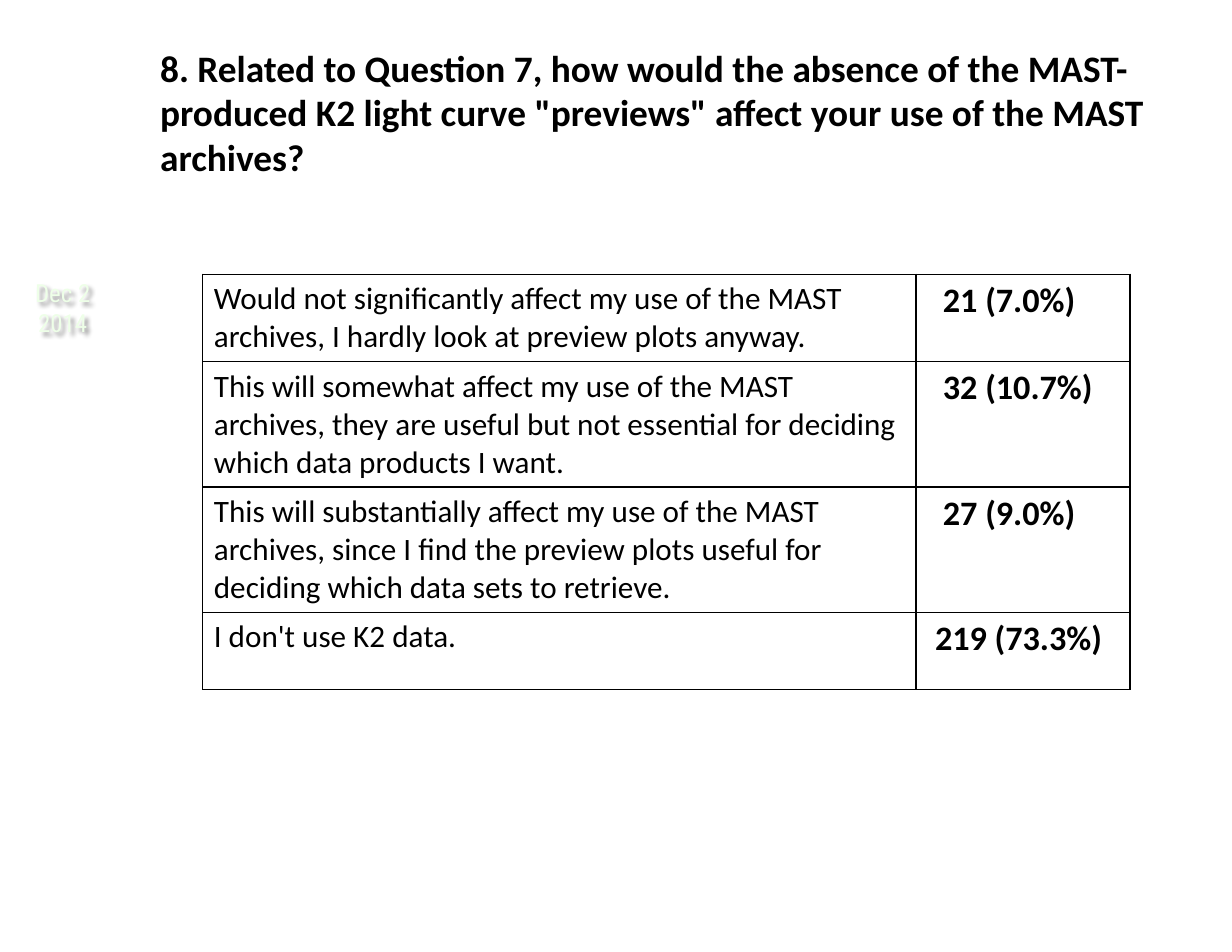
from lxml.etree import SubElement
from pptx import Presentation
from pptx.dml.color import RGBColor
from pptx.enum.text import PP_ALIGN
from pptx.oxml.ns import qn
from pptx.util import Inches, Pt

TITLE = ('8. Related to Question 7, how would the absence of the MAST-produced '
         'K2 light curve "previews" affect your use of the MAST archives?')
DATE = "Dec 2 2014"
ANSWERS = [
    ("Would not significantly affect my use of the MAST archives, "
     "I hardly look at preview plots anyway.", "21 (7.0%)", 0.78, 0.24),
    ("This will somewhat affect my use of the MAST archives, they are useful "
     "but not essential for deciding which data products I want.", "32 (10.7%)", 1.12, 0.24),
    ("This will substantially affect my use of the MAST archives, since I find the "
     "preview plots useful for deciding which data sets to retrieve.", "27 (9.0%)", 1.12, 0.24),
    ("I don't use K2 data.", "219 (73.3%)", 0.69, 0.17),
]
COLS = (6.37, 1.91)
THEME = {
    "font": "Calibri", "date_font": "Roboto Condensed",
    "ink": "000000", "date_ink": "EEFFE8",
    "title": 24, "date": 16, "answer": 20, "count": 22, "border": 1,
}


def write(tf, text, size, bold=False, font=THEME["font"], color=THEME["ink"]):
    """Put one formatted paragraph in a text frame."""
    tf.text = text
    r = tf.paragraphs[0].runs[0]
    r.font.name, r.font.size, r.font.bold = font, Pt(size), bold
    r.font.color.rgb = RGBColor.from_string(color)


def add_text(s, box, text, size, **style):
    """Add a wrapped text box."""
    sp = s.shapes.add_textbox(*map(Inches, box))
    tf = sp.text_frame
    tf.word_wrap = True
    tf.margin_left = tf.margin_right = Inches(0.11)
    tf.margin_top = tf.margin_bottom = Inches(0.06)
    write(tf, text, size, **style)
    return sp


def add_shadow(sp):
    """Give the text of an unfilled box a soft shadow."""
    effects = SubElement(sp._element.spPr, qn("a:effectLst"))
    shadow = SubElement(effects, qn("a:outerShdw"), blurRad="38100", dist="38100",
                        dir="2700000", algn="tl", rotWithShape="0")
    color = SubElement(shadow, qn("a:srgbClr"), val=THEME["ink"])
    SubElement(color, qn("a:alpha"), val="43000")


def style_cell(cell):
    """Give a cell thin borders and no fill."""
    tcPr = cell._tc.get_or_add_tcPr()
    for side in ("lnL", "lnR", "lnT", "lnB"):
        ln = SubElement(tcPr, qn(f"a:{side}"), w=str(Pt(THEME["border"])))
        fill = SubElement(ln, qn("a:solidFill"))
        SubElement(fill, qn("a:srgbClr"), val=THEME["ink"])
    cell.fill.background()


def add_answers(s):
    """Add the table of answers with their counts."""
    height = sum(row[2] for row in ANSWERS)
    table = s.shapes.add_table(len(ANSWERS), len(COLS), Inches(1.81), Inches(2.45),
                               Inches(sum(COLS)), Inches(height)).table
    table.first_row = table.horz_banding = False
    for col, width in zip(table.columns, COLS):
        col.width = Inches(width)
    for row, (answer, count, row_height, inset) in zip(table.rows, ANSWERS):
        row.height = Inches(row_height)
        left, right = row.cells
        write(left.text_frame, answer, THEME["answer"])
        write(right.text_frame, count, THEME["count"], bold=True)
        right.margin_left = Inches(inset)
        for cell in (left, right):
            style_cell(cell)


def main():
    """Build the survey question slide."""
    prs = Presentation()
    prs.slide_width, prs.slide_height = Inches(11), Inches(8.5)
    s = prs.slides.add_slide(prs.slide_layouts[6])
    date = add_text(s, (0.04, 2.42, 1.04, 0.65), DATE, THEME["date"],
                    font=THEME["date_font"], color=THEME["date_ink"])
    date.text_frame.paragraphs[0].alignment = PP_ALIGN.CENTER
    add_shadow(date)
    add_text(s, (1.32, 0.34, 9.13, 3.06), TITLE, THEME["title"], bold=True)
    add_answers(s)
    prs.save("out.pptx")


if __name__ == "__main__":
    main()
